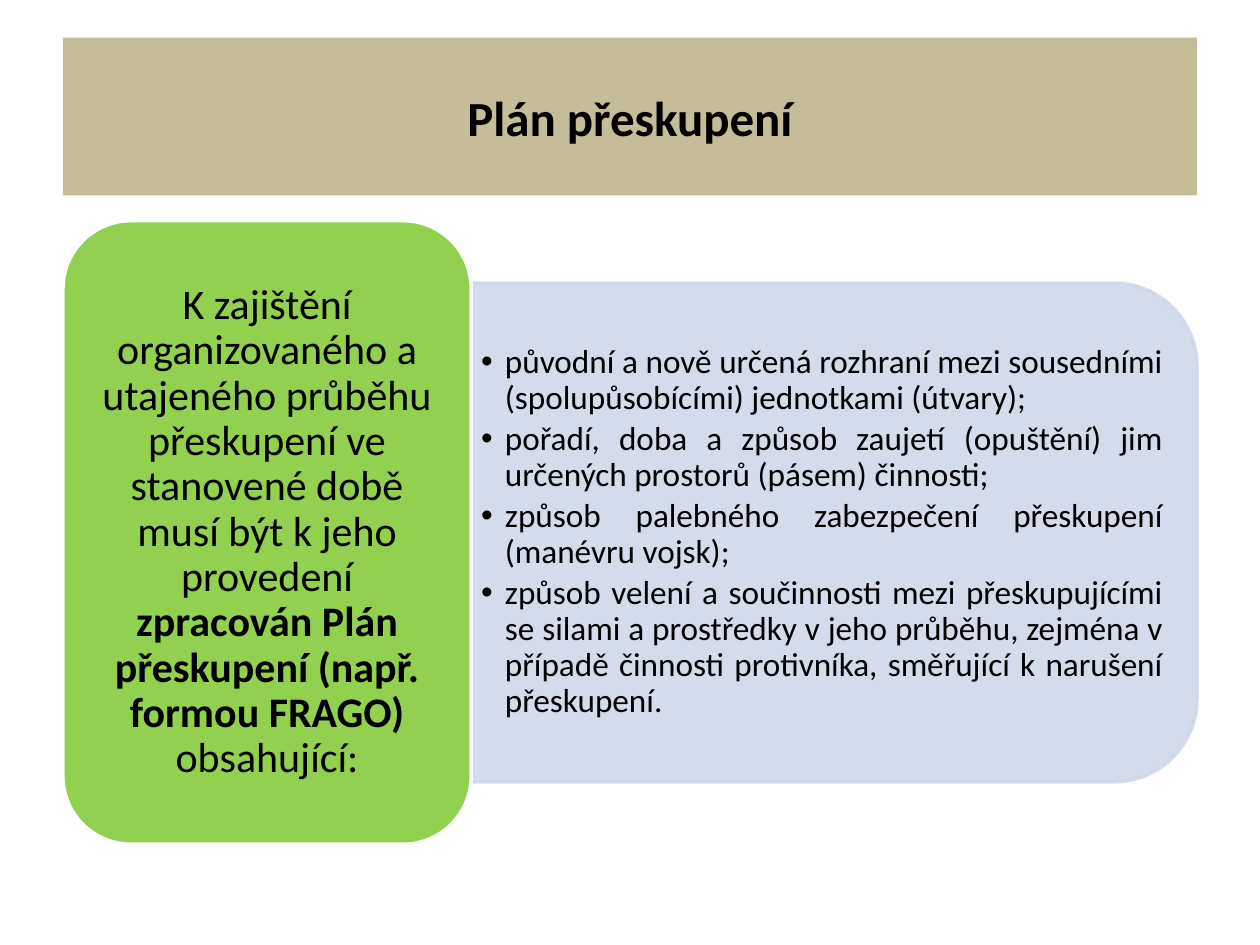
from lxml.etree import SubElement
from pptx import Presentation
from pptx.dml.color import RGBColor
from pptx.enum.shapes import MSO_SHAPE as Kind
from pptx.enum.text import MSO_ANCHOR as Anchor, PP_ALIGN as Align
from pptx.oxml.ns import qn
from pptx.util import Cm, Pt

FONT = "Calibri"
COLORS = {"title": "C4BD97", "panel": "D0D8E8", "card": "92D050",
          "edge": "FFFFFF", "text": "000000"}
TITLE = "Plán přeskupení"
INTRO = [
    ("K zajištění organizovaného a utajeného průběhu přeskupení ve stanovené "
     "době musí být k jeho provedení ", False),
    ("zpracován Plán přeskupení (např. formou FRAGO)", True),
    (" obsahující:", False),
]
ITEMS = [
    "původní a nově určená rozhraní mezi sousedními (spolupůsobícími) "
    "jednotkami (útvary);",
    "pořadí, doba a způsob zaujetí (opuštění) jim určených prostorů (pásem) "
    "činnosti;",
    "způsob palebného zabezpečení přeskupení (manévru vojsk);",
    "způsob velení a součinnosti mezi přeskupujícími se silami a prostředky "
    "v jeho průběhu, zejména v případě činnosti protivníka, směřující "
    "k narušení přeskupení.",
]


def color(name):
    return RGBColor.from_string(COLORS[name])


def add_box(slide, kind, box, fill, edge=None):
    """Add a flat filled shape; box is left, top, width, height in cm."""
    shape = slide.shapes.add_shape(kind, *map(Cm, box))
    shape.shadow.inherit = False
    shape.fill.solid()
    shape.fill.fore_color.rgb = color(fill)
    if edge:
        shape.line.color.rgb = color(edge)
        shape.line.width = Pt(2)
    else:
        shape.line.fill.background()
    return shape


def style(run, size, bold=False):
    run.font.name = FONT
    run.font.size = Pt(size)
    run.font.bold = bold
    run.font.color.rgb = color("text")


def set_alpha(shape, percent):
    """Make the fill and line of a shape partly transparent."""
    for tint in shape._element.spPr.iter(qn("a:srgbClr")):
        SubElement(tint, qn("a:alpha"), val=str(percent * 1000))


def set_bullet(para, indent):
    props = para._p.get_or_add_pPr()
    props.set("marL", str(Cm(indent)))
    props.set("indent", str(-Cm(indent)))
    SubElement(props, qn("a:buFont"), typeface="Arial")
    SubElement(props, qn("a:buChar"), char="•")


def add_title(slide, box):
    frame = add_box(slide, Kind.RECTANGLE, box, "title").text_frame
    frame.text = TITLE
    frame.vertical_anchor = Anchor.MIDDLE
    para = frame.paragraphs[0]
    para.alignment = Align.CENTER
    style(para.runs[0], 28, True)


def add_card(slide, box):
    frame = add_box(slide, Kind.ROUNDED_RECTANGLE, box, "card", "edge").text_frame
    frame.word_wrap = True
    frame.vertical_anchor = Anchor.MIDDLE
    para = frame.paragraphs[0]
    para.alignment = Align.CENTER
    para.line_spacing = 0.9
    for text, bold in INTRO:
        run = para.add_run()
        run.text = text
        style(run, 24, bold)


def add_panel(slide, box):
    """Add the panel rounded on its right side, with the bullet list on it."""
    left, top, width, height = box
    shift = (width - height) / 2
    upright = (left + shift, top - shift, height, width)
    shape = add_box(slide, Kind.ROUND_2_SAME_RECTANGLE, upright, "panel", "panel")
    shape.rotation = 90
    set_alpha(shape, 90)

    pad = 0.49
    inner = (left, top + pad, width - pad, height - 2 * pad)
    frame = slide.shapes.add_textbox(*map(Cm, inner)).text_frame
    frame.word_wrap = True
    frame.vertical_anchor = Anchor.MIDDLE
    frame.margin_left = frame.margin_right = Cm(0.2)
    frame.margin_top = frame.margin_bottom = Cm(0.1)
    frame.text = "\n".join(ITEMS)
    for para in frame.paragraphs:
        para.alignment = Align.JUSTIFY
        para.line_spacing = 0.9
        para.space_after = Pt(3)
        para.level = 1
        set_bullet(para, 0.48)
        style(para.runs[0], 19)


def add_body(slide, box):
    """Split the box into a card and a lower panel centred beside it."""
    left, top, width, height = box
    split = 0.36 * width
    add_panel(slide, (left + split, top + 0.1 * height,
                      width - split, 0.8 * height))
    add_card(slide, (left, top, split, height))


def main():
    deck = Presentation()
    deck.slide_width, deck.slide_height = Cm(25.4), Cm(19.05)
    slide = deck.slides.add_slide(deck.slide_layouts[6])
    margin, width = 1.27, 22.86
    add_title(slide, (margin, 0.76, width, 3.18))
    add_body(slide, (margin, 4.45, width, 12.57))
    deck.save("out.pptx")


if __name__ == "__main__":
    main()
